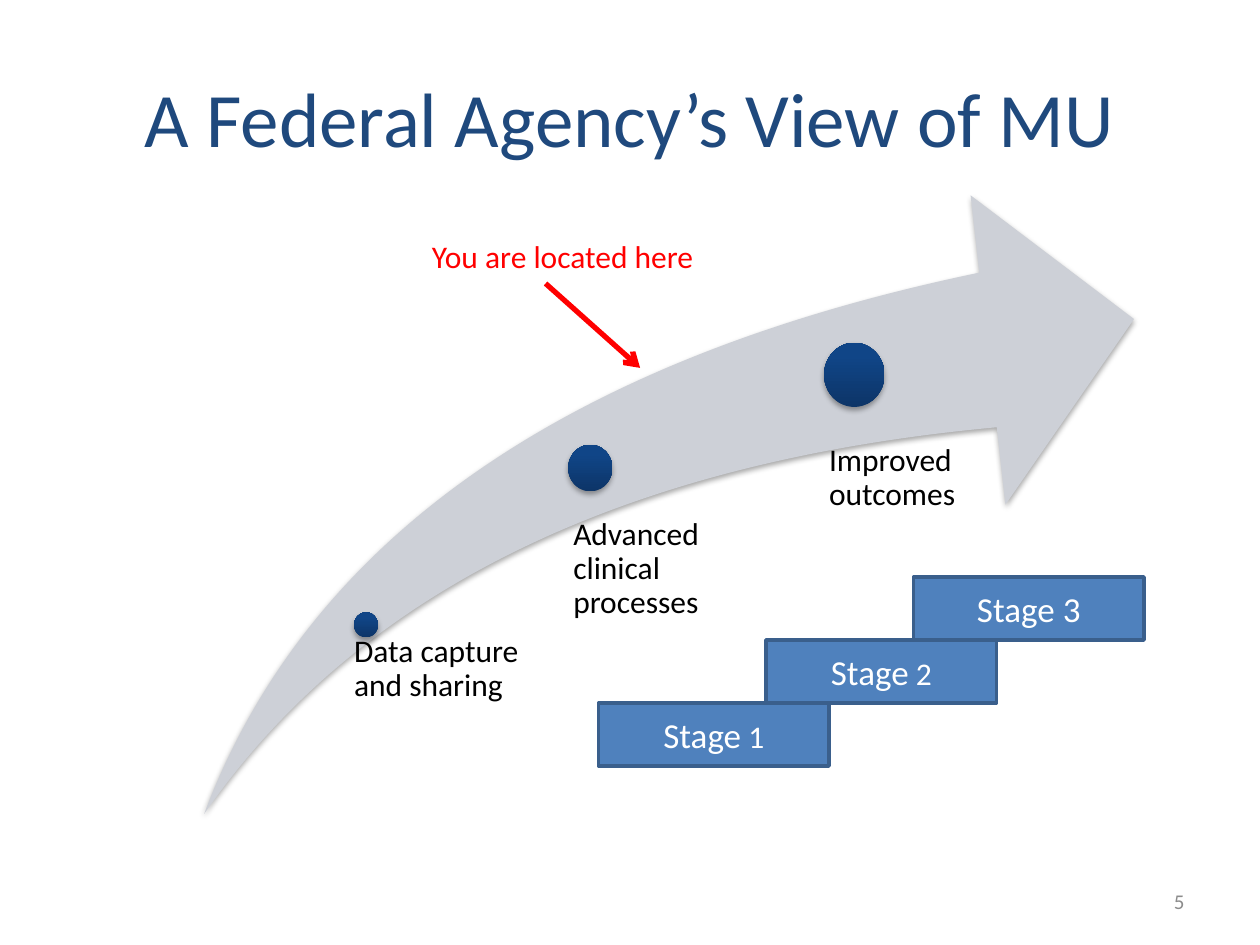
from lxml import etree
from pptx import Presentation
from pptx.dml.color import RGBColor
from pptx.enum.shapes import MSO_CONNECTOR, MSO_SHAPE
from pptx.enum.text import MSO_ANCHOR as ANCHOR, PP_ALIGN as ALIGN
from pptx.oxml import parse_xml
from pptx.oxml.ns import nsdecls, qn
from pptx.util import Inches, Pt

NAVY = RGBColor(0x1F, 0x49, 0x7D)
GRAY = RGBColor(0x8C, 0x8C, 0x8C)
SWOOSH = RGBColor(0xCD, 0xD0, 0xD7)
RED = RGBColor(0xFF, 0, 0)
BLACK = RGBColor(0, 0, 0)
WHITE = RGBColor(0xFF, 0xFF, 0xFF)
BLUE = RGBColor(0x4F, 0x81, 0xBD)
BLUE_EDGE = RGBColor(0x3A, 0x5F, 0x8C)
DOT_STOPS = [(0, "0D3568"), (80, "104587"), (100, "0E458A")]

# Content: label, label box, left inset, dot box
MILESTONES = [
    ("Data capture and sharing", (2.74, 5.04, 1.72, 1.42), 0.07, (2.81, 4.86, 0.19, 0.2)),
    ("Advanced clinical processes", (4.41, 4.11, 1.77, 2.02), 0.14, (4.51, 3.53, 0.35, 0.37)),
    ("Improved outcomes", (6.39, 3.53, 1.77, 2.44), 0.19, (6.54, 2.72, 0.48, 0.51)),
]
# Runs (text, size) and left edge, from the lowest step up
STAGES = [
    ([("Stage", 20), (" 1", 18)], 4.75),
    ([("Stage", 20), (" 2", 18)], 6.08),
    ([("Stage 3", 20)], 7.25),
]
STEP_BOTTOM, STEP_W, STEP_H = 6.08, 1.83, 0.5

prs = Presentation()
prs.slide_width, prs.slide_height = Inches(10), Inches(7.5)
s = prs.slides.add_slide(prs.slide_layouts[6])


def write(sp, runs, color=BLACK, align=ALIGN.LEFT, anchor=ANCHOR.TOP,
          wrap=True, insets=None, spacing=None):
    """Fill a shape with one paragraph made of (text, size) runs."""
    tf = sp.text_frame
    tf.word_wrap, tf.vertical_anchor = wrap, anchor
    if insets:
        tf.margin_left, tf.margin_top, tf.margin_right, tf.margin_bottom = map(Inches, insets)
    p = tf.paragraphs[0]
    p.alignment = align
    if spacing:
        p.line_spacing = spacing
    for text, size in runs:
        r = p.add_run()
        r.text = text
        r.font.name, r.font.size = "Calibri", Pt(size)
        r.font.color.rgb = color


def add_text(box, text, size, **fmt):
    write(s.shapes.add_textbox(*map(Inches, box)), [(text, size)], **fmt)


def add_shape(kind, box, fill=None, edge=None):
    sp = s.shapes.add_shape(kind, *map(Inches, box))
    sp.shadow.inherit = False
    if fill:
        sp.fill.solid()
        sp.fill.fore_color.rgb = fill
    if edge:
        sp.line.color.rgb, sp.line.width = edge, Pt(2)
    else:
        sp.line.fill.background()
    return sp


def drop_shadow(sp):
    effects = sp._element.spPr.find(qn("a:effectLst"))
    effects.append(parse_xml(
        f'<a:outerShdw {nsdecls("a")} blurRad="{Pt(3.1)}" dist="{Pt(1.8)}" dir="5400000" '
        'rotWithShape="0"><a:srgbClr val="000000"><a:alpha val="35000"/></a:srgbClr>'
        '</a:outerShdw>'))


def dot_gradient(sp):
    sp.fill.gradient()
    sp.fill.gradient_angle = 90
    stops = sp._element.spPr.find(qn("a:gradFill")).find(qn("a:gsLst"))
    for old in list(stops):
        stops.remove(old)
    for pos, color in DOT_STOPS:
        gs = etree.SubElement(stops, qn("a:gs"), pos=str(pos * 1000))
        etree.SubElement(gs, qn("a:srgbClr"), val=color)


# Title and slide number
add_text((0.5, 0.3, 9, 1.25), "A Federal Agency’s View of MU", 44,
         color=NAVY, align=ALIGN.CENTER, anchor=ANCHOR.MIDDLE)
add_text((7.17, 6.95, 2.33, 0.4), "5", 12,
         color=GRAY, align=ALIGN.RIGHT, anchor=ANCHOR.MIDDLE)

# Rising arrow
swoosh = add_shape(MSO_SHAPE.SWOOSH_ARROW, (1.62, 1.55, 7.38, 4.91), SWOOSH)
swoosh.adjustments[0] = swoosh.adjustments[1] = 0.25
drop_shadow(swoosh)

# Milestone labels and dots
for label, label_box, inset, dot_box in MILESTONES:
    add_text(label_box, label, 18, insets=(inset, 0, 0, 0), spacing=0.9)
    dot = add_shape(MSO_SHAPE.OVAL, dot_box)
    dot_gradient(dot)
    drop_shadow(dot)

# Location pointer
pointer = s.shapes.add_connector(
    MSO_CONNECTOR.STRAIGHT, *map(Inches, (4.33, 2.25, 5.08, 2.92)))
pointer.line.color.rgb, pointer.line.width = RED, Pt(3)
etree.SubElement(pointer.line._get_or_add_ln(), qn("a:tailEnd"), type="arrow")
etree.SubElement(pointer._element.spPr, qn("a:effectLst"))
add_text((3.33, 1.83, 2.3, 0.4), "You are located here", 18, color=RED, wrap=False)

# Stage steps
for i, (runs, left) in enumerate(STAGES):
    top = STEP_BOTTOM - (i + 1) * STEP_H
    step = add_shape(MSO_SHAPE.RECTANGLE, (left, top, STEP_W, STEP_H), BLUE, BLUE_EDGE)
    write(step, runs, color=WHITE, align=ALIGN.CENTER, anchor=ANCHOR.MIDDLE)

prs.save("out.pptx")
